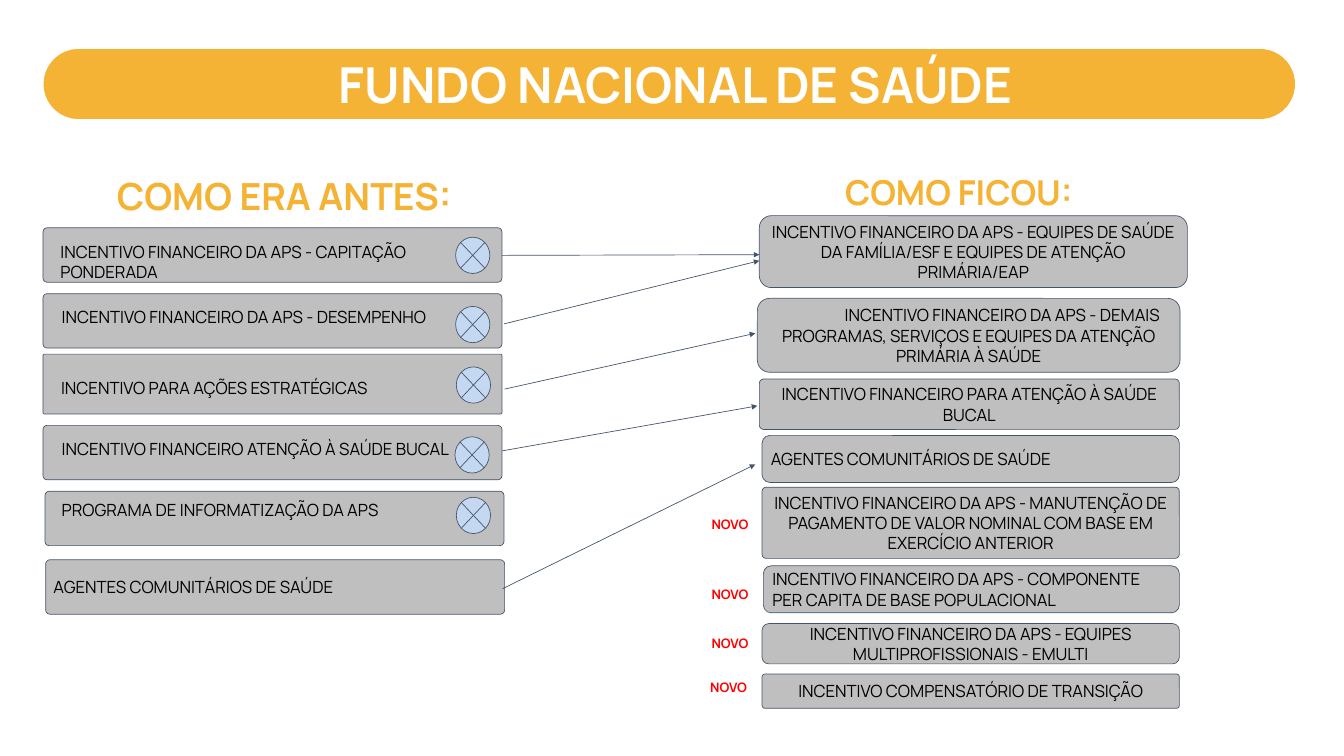
from lxml.etree import SubElement
from pptx import Presentation
from pptx.dml.color import RGBColor
from pptx.enum.shapes import MSO_CONNECTOR, MSO_SHAPE
from pptx.enum.text import MSO_ANCHOR, PP_ALIGN
from pptx.oxml.ns import qn
from pptx.util import Inches, Pt

FONT = "Manrope"
GOLD, GRAY, NAVY, BLUE = "F5B335", "BFBFBF", "44546A", "C5D8F1"
BLACK, WHITE, RED = "000000", "FFFFFF", "FF0000"
LEFT, CENTER = PP_ALIGN.LEFT, PP_ALIGN.CENTER

TITLE = "FUNDO NACIONAL DE SAÚDE"
HEADINGS = [
    ("COMO ERA ANTES:", 40, (0.23, 2.38, 8, 0.88)),
    ("COMO FICOU:", 36.7, (10.27, 2.36, 8, 0.68)),
]

OLD_WIDTH = 6.83
OLD_BOXES = [
    (0.64, 3.39, 0.81, 0.075),
    (0.64, 4.37, 0.81, 0.075),
    (0.64, 5.27, 0.89, 0.023),
    (0.64, 6.33, 0.81, 0.075),
    (0.67, 7.31, 0.81, 0.075),
]
OLD_LABELS = [
    ("INCENTIVO FINANCEIRO DA APS - CAPITAÇÃO PONDERADA", (0.8, 3.55, 6.51, 0.71)),
    ("INCENTIVO FINANCEIRO DA APS - DESEMPENHO", (0.82, 4.51, 5.87, 0.4)),
    ("INCENTIVO PARA AÇÕES ESTRATÉGICAS", (0.81, 5.57, 5.78, 0.4)),
    ("INCENTIVO FINANCEIRO ATENÇÃO À SAÚDE BUCAL", (0.82, 6.48, 6.23, 0.4)),
    ("PROGRAMA DE INFORMATIZAÇÃO DA APS", (0.82, 7.39, 5.17, 0.4)),
]
CROSSES = [(6.78, 3.53), (6.78, 4.56), (6.79, 5.46), (6.77, 6.5), (6.79, 7.4)]

FILLED_BOXES = [
    ("AGENTES COMUNITÁRIOS DE SAÚDE", (0.68, 8.33, OLD_WIDTH, 0.81), 0.075, LEFT, 0),
    ("INCENTIVO FINANCEIRO DA APS - EQUIPES DE SAÚDE DA FAMÍLIA/ESF E EQUIPES DE "
     "ATENÇÃO PRIMÁRIA/EAP", (11.3, 3.21, 6.37, 1.07), 0.167, CENTER, 0),
    ("INCENTIVO FINANCEIRO DA APS - DEMAIS PROGRAMAS, SERVIÇOS E EQUIPES DA ATENÇÃO "
     "PRIMÁRIA À SAÚDE", (11.27, 4.44, 6.29, 1.1), 0.167, CENTER, 1),
    ("INCENTIVO FINANCEIRO PARA ATENÇÃO À SAÚDE BUCAL",
     (11.3, 5.64, 6.25, 0.75), 0.083, CENTER, 0),
    ("AGENTES COMUNITÁRIOS DE SAÚDE", (11.34, 6.48, 6.21, 0.7), 0.167, LEFT, 0),
    ("INCENTIVO FINANCEIRO DA APS - MANUTENÇÃO DE PAGAMENTO DE VALOR NOMINAL COM BASE "
     "EM EXERCÍCIO ANTERIOR", (11.34, 7.25, 6.21, 1.06), 0.057, CENTER, 0),
    ("INCENTIVO FINANCEIRO DA APS - COMPONENTE PER CAPITA DE BASE POPULACIONAL",
     (11.36, 8.42, 6.19, 0.7), 0.167, LEFT, 0),
    ("INCENTIVO FINANCEIRO DA APS - EQUIPES MULTIPROFISSIONAIS - EMULTI",
     (11.34, 9.28, 6.21, 0.6), 0.167, CENTER, 0),
    ("INCENTIVO COMPENSATÓRIO DE TRANSIÇÃO", (11.34, 10.03, 6.21, 0.51), 0.083, CENTER, 0),
]
NEW_TAGS = [(10.49, 7.63), (10.49, 8.68), (10.49, 9.41), (10.47, 10.06)]
ARROWS = [
    (7.47, 3.8, 11.3, 3.79),
    (7.5, 4.82, 11.3, 3.88),
    (7.51, 5.79, 11.24, 4.96),
    (7.47, 6.71, 11.27, 6.04),
    (7.48, 8.76, 11.24, 6.91),
]


def color(value):
    return RGBColor.from_string(value)


def inches(values):
    return [Inches(value) for value in values]


def write(shape, text, size, font_color, align=LEFT, bold=False, margins=(0.1, 0.05),
          anchor=MSO_ANCHOR.TOP, spacing=None, indent=0):
    frame = shape.text_frame
    frame.word_wrap = True
    frame.vertical_anchor = anchor
    frame.margin_left = frame.margin_right = Inches(margins[0])
    frame.margin_top = frame.margin_bottom = Inches(margins[1])
    paragraph = frame.paragraphs[0]
    paragraph.alignment = align
    if spacing:
        paragraph.line_spacing = spacing
    if indent:
        paragraph._p.get_or_add_pPr().set("indent", str(Inches(indent)))
    run = paragraph.add_run()
    run.text = text
    run.font.name = FONT
    run.font.size = Pt(size)
    run.font.bold = bold
    run.font.color.rgb = color(font_color)


def add_text(slide, box, *content, **options):
    write(slide.shapes.add_textbox(*inches(box)), *content, **options)


def add_box(slide, kind, box, fill, corner=None):
    shape = slide.shapes.add_shape(kind, *inches(box))
    shape.shadow.inherit = False
    shape.fill.solid()
    shape.fill.fore_color.rgb = color(fill)
    shape.line.color.rgb = color(NAVY)
    shape.line.width = Pt(0.75)
    if corner is not None:
        shape.adjustments[0] = corner
    return shape


def add_line(slide, ends, line_color, width):
    connector = slide.shapes.add_connector(MSO_CONNECTOR.STRAIGHT, *inches(ends))
    connector.line.color.rgb = color(line_color)
    connector.line.width = Pt(width)
    SubElement(connector._element.spPr, qn("a:effectLst"))
    return connector.line._get_or_add_ln()


def main():
    presentation = Presentation()
    presentation.slide_width, presentation.slide_height = inches((20, 11.25))
    slide = presentation.slides.add_slide(presentation.slide_layouts[6])

    add_line(slide, (1.17, 1.25, 18.75, 1.25), GOLD, 75).set("cap", "rnd")
    add_text(slide, (2.06, 0.75, 16, 0.99), TITLE, 53, WHITE, align=CENTER, bold=True)
    for text, size, box in HEADINGS:
        add_text(slide, box, text, size, GOLD, align=CENTER, bold=True,
                 margins=(0, 0), spacing=1.3)

    for left, top, height, corner in OLD_BOXES:
        add_box(slide, MSO_SHAPE.ROUNDED_RECTANGLE, (left, top, OLD_WIDTH, height), GRAY, corner)
    for text, box, corner, align, indent in FILLED_BOXES:
        shape = add_box(slide, MSO_SHAPE.ROUNDED_RECTANGLE, box, GRAY, corner)
        write(shape, text, 18, BLACK, align=align, margins=(0.1, 0.1),
              anchor=MSO_ANCHOR.MIDDLE, indent=indent)

    for ends in ARROWS:
        SubElement(add_line(slide, ends, NAVY, 0.75), qn("a:tailEnd"), type="triangle")
    for left, top in CROSSES:
        add_box(slide, MSO_SHAPE.FLOWCHART_SUMMING_JUNCTION, (left, top, 0.51, 0.54), BLUE)
    for text, box in OLD_LABELS:
        add_text(slide, box, text, 18, BLACK)
    for left, top in NEW_TAGS:
        add_text(slide, (left, top, 0.81, 0.34), "NOVO", 14, RED, bold=True)

    presentation.save("out.pptx")


if __name__ == "__main__":
    main()
